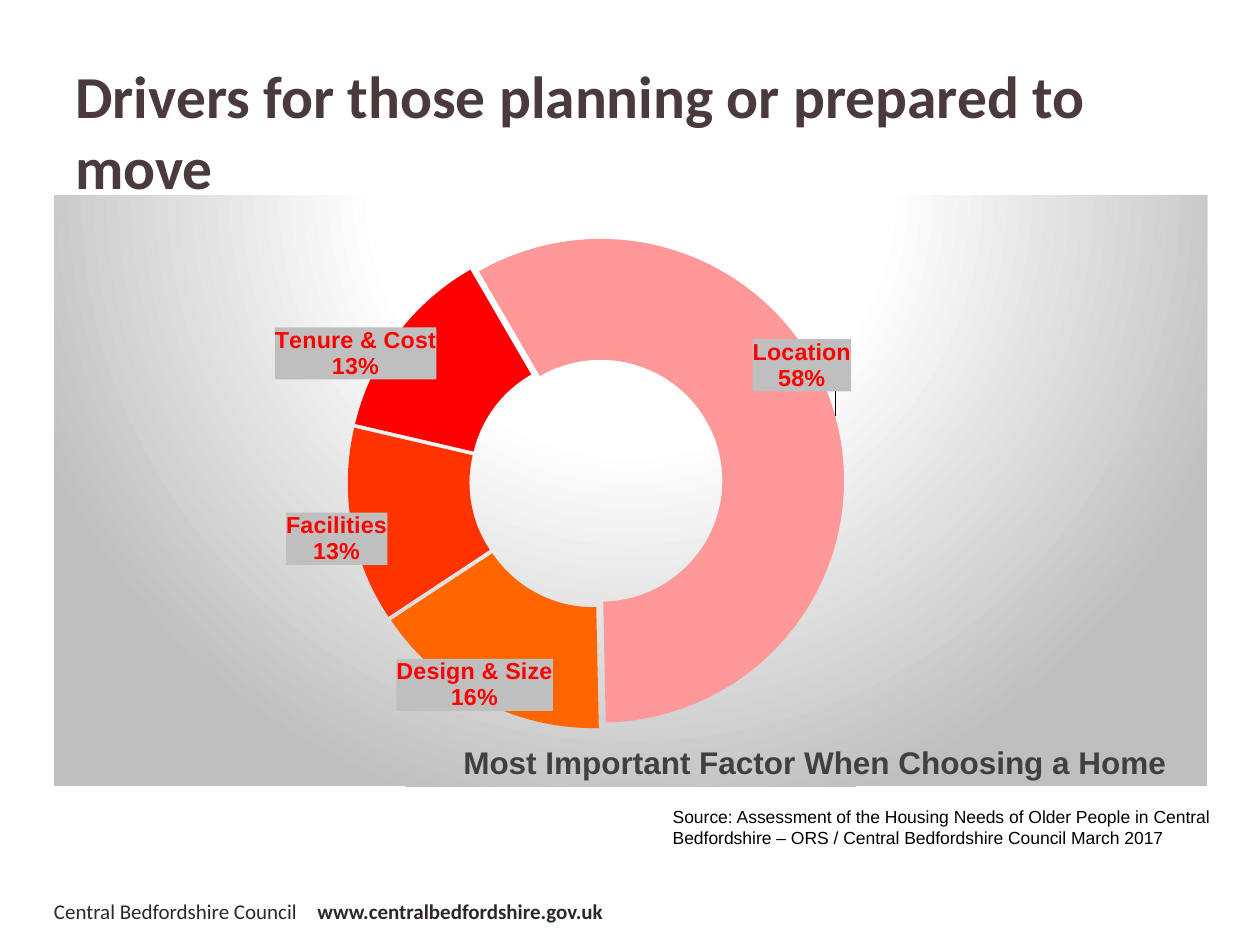
from pptx import Presentation
from pptx.chart.data import CategoryChartData
from pptx.dml.color import RGBColor
from pptx.enum.chart import XL_CHART_TYPE
from pptx.oxml import parse_xml
from pptx.oxml.ns import nsdecls, qn
from pptx.util import Inches, Pt

FACTORS = [
    ("Location", 58, "FF9999", 0.022, -0.113),
    ("Design & Size", 16, "FF6600", -0.03, 0.064),
    ("Facilities", 13, "FF3300", -0.065, 0.04),
    ("Tenure & Cost", 13, "FF0000", -0.078, -0.03),
]


def color(value):
    return RGBColor.from_string(value)


def c_xml(tag, attrs="", body=""):
    return parse_xml(f'<c:{tag} {nsdecls("c", "a")} {attrs}>{body}</c:{tag}>')


def layout(**values):
    body = "".join(f'<c:{k} val="{v}"/>' for k, v in values.items())
    return c_xml("layout", body=f"<c:manualLayout>{body}</c:manualLayout>")


def set_layout(parent, new, after=None):
    old = parent.find(qn("c:layout"))
    if old is not None:
        parent.remove(old)
    if after is None:
        parent.insert(0, new)
    else:
        parent.find(qn(after)).addnext(new)


class SlideBuilder:
    def __init__(self, prs):
        self.s = prs.slides.add_slide(prs.slide_layouts[6])
        self.heading = "Calibri"
        self.body = "Arial"

    def style(self, font, name, size, hex_color, bold=False):
        font.name = name
        font.size = Pt(size)
        font.bold = bold
        font.color.rgb = color(hex_color)

    def text(self, box, runs, name, size, hex_color, tab=None):
        sp = self.s.shapes.add_textbox(*map(Inches, box))
        tf = sp.text_frame
        tf.word_wrap = True
        p = tf.paragraphs[0]
        if tab:
            p._p.get_or_add_pPr().append(parse_xml(
                f'<a:tabLst {nsdecls("a")}><a:tab pos="{Inches(tab)}" algn="l"/></a:tabLst>'))
        for text, bold in runs:
            r = p.add_run()
            r.text = text
            self.style(r.font, name, size, hex_color, bold)

    def label(self, point, dx, dy):
        font = point.data_label.font
        self.style(font, self.body, 13.3, "FF0000", True)
        txPr = font._rPr.getparent().getparent().getparent()
        dLbl = txPr.getparent()
        for old in dLbl.findall(qn("c:spPr")):
            dLbl.remove(old)
        set_layout(dLbl, layout(x=dx, y=dy), "c:idx")
        txPr.addprevious(c_xml("numFmt", 'formatCode="0%" sourceLinked="0"'))
        txPr.addprevious(c_xml("spPr", body=(
            '<a:solidFill><a:srgbClr val="BFBFBF"/></a:solidFill>')))
        for tag, shown in (("showVal", 0), ("showCatName", 1), ("showPercent", 1)):
            dLbl.find(qn(f"c:{tag}")).set("val", str(shown))
        dLbl.find(qn("c:showBubbleSize")).addnext(c_xml("separator", body="\n"))

    def backdrop(self, chart):
        stops = "".join(
            f'<a:gs pos="{pos * 1000}"><a:srgbClr val="{value}"/></a:gs>'
            for pos, value in ((0, "FFFFFF"), (39, "FFFFFF"), (100, "BFBFBF")))
        chart.element.find(qn("c:chart")).addnext(c_xml("spPr", body=(
            f'<a:gradFill><a:gsLst>{stops}</a:gsLst><a:path path="circle">'
            '<a:fillToRect l="50000" t="-80000" r="50000" b="180000"/>'
            '</a:path></a:gradFill><a:ln><a:noFill/></a:ln>')))

    def doughnut(self, box, title, factors):
        data = CategoryChartData()
        data.categories = [name for name, *_ in factors]
        data.add_series("Series 1", [value for _, value, *_ in factors])
        chart = self.s.shapes.add_chart(
            XL_CHART_TYPE.DOUGHNUT, *map(Inches, box), data).chart
        self.style(chart.font, self.body, 10, "000000")
        chart.has_legend = False
        chart.has_title = True
        r = chart.chart_title.text_frame.paragraphs[0].add_run()
        r.text = title
        self.style(r.font, self.body, 18, "404040", True)
        chart.chart_title.include_in_layout = False
        set_layout(chart.chart_title._element, layout(
            xMode="edge", yMode="edge", x=0.35, y=0.915), "c:tx")

        plot = chart.plots[0]
        plot.vary_by_categories = True
        plot._element.find(qn("c:firstSliceAng")).set("val", "330")
        plot._element.find(qn("c:holeSize")).set("val", "50")
        set_layout(plot._element.getparent(), layout(
            layoutTarget="inner", xMode="edge", yMode="edge",
            x=0.251, y=0.068, w=0.438, h=0.835))

        series = plot.series[0]
        series.format.line.fill.background()
        series._element.find(qn("c:spPr")).addnext(c_xml("explosion", 'val="4"'))
        labels = series.data_labels
        labels.show_value = False
        labels.show_category_name = True
        labels.show_percentage = True
        labels.number_format = "0%"
        labels.number_format_is_linked = False
        self.style(labels.font, self.body, 13.3, "FFFFFF", True)
        for i, (_, _, fill, dx, dy) in enumerate(factors):
            point = series.points[i]
            point.format.fill.solid()
            point.format.fill.fore_color.rgb = color(fill)
            point.format.line.fill.background()
            self.label(point, dx, dy)
        self.backdrop(chart)


def main():
    prs = Presentation()
    prs.slide_width = Inches(10)
    prs.slide_height = Inches(7.5)
    b = SlideBuilder(prs)
    b.text((0.33, 7.08, 7.75, 0.3),
           [("Central Bedfordshire Council\t", False),
            ("www.centralbedfordshire.gov.uk", True)],
           b.heading, 12, "2F2727", tab=2.09)
    b.doughnut((0.43, 1.55, 9.15, 4.72),
               "Most Important Factor When Choosing a Home", FACTORS)
    b.text((0.5, 0.42, 9.08, 1.25),
           [("Drivers for those planning or prepared to move", True)],
           b.heading, 34, "4A3A3C")
    b.text((5.24, 6.35, 4.49, 0.44),
           [("Source: Assessment of the Housing Needs of Older People in Central "
             "Bedfordshire – ORS / Central Bedfordshire Council March 2017", False)],
           b.body, 10, "000000")
    prs.save("out.pptx")


if __name__ == "__main__":
    main()
